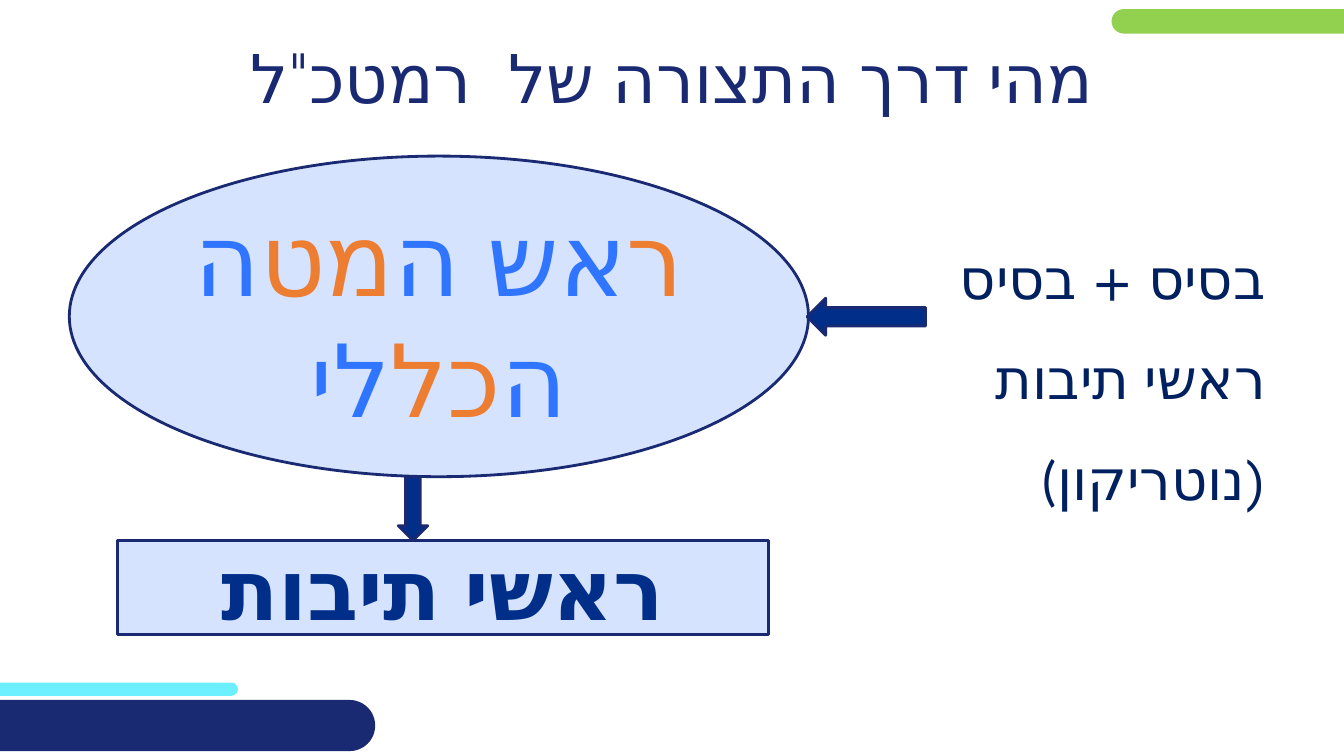
from lxml.etree import SubElement
from pptx import Presentation
from pptx.dml.color import RGBColor
from pptx.enum.shapes import MSO_SHAPE as Shape
from pptx.enum.text import MSO_ANCHOR as Anchor, MSO_AUTO_SIZE as AutoSize, PP_ALIGN as Align
from pptx.oxml.ns import qn
from pptx.util import Pt

FONT = "TeX Gyre Adventor"
NAVY, BLUE, DEEP = "192A72", "002E89", "002060"
PALE, BRIGHT, ORANGE = "D6E3FF", "3075FF", "ED7D31"
GREEN, CYAN = "92D050", "6CF0FF"


def color(value):
    return RGBColor.from_string(value)


def place(item, box):
    item.left, item.top, item.width, item.height = [Pt(length) for length in box]


def add_shape(page, kind, box, fill, line=None):
    shape = page.shapes.add_shape(kind, *[Pt(length) for length in box])
    shape.shadow.inherit = False
    shape.fill.solid()
    shape.fill.fore_color.rgb = color(fill)
    if line:
        shape.line.color.rgb = color(line)
        shape.line.width = Pt(2)
    else:
        shape.line.fill.background()
    return shape


def set_frame(item, anchor):
    frame = item.text_frame
    frame.word_wrap = True
    frame.auto_size = AutoSize.NONE
    frame.vertical_anchor = anchor
    return frame


def format_para(para, align, spacing=1.0):
    """Right-to-left paragraph without bullet or indent."""
    para.alignment = align
    para.line_spacing = spacing
    para.space_before = Pt(0)
    props = para._p.get_or_add_pPr()
    for name, value in (("rtl", "1"), ("marL", "0"), ("marR", "0"), ("indent", "0")):
        props.set(name, value)
    SubElement(props, qn("a:buNone"))


def add_run(para, text, size, tint, bold=False, font=FONT):
    span = para.add_run()
    span.text = text
    span.font.size = Pt(size)
    span.font.bold = bold
    span.font.color.rgb = color(tint)
    span.font.name = font
    # Hebrew takes its typeface from the complex-script entry
    props = span._r.get_or_add_rPr()
    props.set("lang", "he-IL")
    SubElement(props, qn("a:cs")).set("typeface", font)


def add_bars(page, width, height):
    """Rounded bars that bleed off the page edges."""
    bars = [
        ((-72, height - 52.5, 242, 9.5), CYAN),
        ((width - 166, 6.5, 418, 17.5), GREEN),
        ((-170, height - 40, 438, 36.5), NAVY),
    ]
    for box, fill in bars:
        add_shape(page, Shape.ROUNDED_RECTANGLE, box, fill).adjustments[0] = 0.5


def add_title(page, box):
    title = page.shapes.title
    place(title, box)
    para = set_frame(title, Anchor.MIDDLE).paragraphs[0]
    format_para(para, Align.CENTER)
    add_run(para, 'מהי דרך התצורה של  רמטכ"ל', 48, NAVY)


def add_methods(page, box):
    """List of word-formation methods on the right."""
    body = page.placeholders[1]
    place(body, box)
    frame = set_frame(body, Anchor.TOP)
    lines = [
        [("בסיס + בסיס", FONT)],
        [("ראשי תיבות", FONT)],
        [("(נוטריקון", FONT), (")", "Calibri")],
    ]
    for index, parts in enumerate(lines):
        para = frame.add_paragraph() if index else frame.paragraphs[0]
        format_para(para, Align.RIGHT, 1.5)
        for text, font in parts:
            add_run(para, text, 40, DEEP, font=font)


def add_diagram(page, box):
    """Ellipse with the full phrase, arrows, and the resulting method."""
    left, top, width, height = box
    ellipse_height, answer_height = 229, 67
    ellipse = add_shape(page, Shape.OVAL, (left, top, 528, ellipse_height), PALE, NAVY)
    para = set_frame(ellipse, Anchor.MIDDLE).paragraphs[0]
    format_para(para, Align.CENTER)
    pieces = ["ר", "אש ה", "מט", "ה ה", "כל", "לי"]
    for index, text in enumerate(pieces):
        add_run(para, text, 72, BRIGHT if index % 2 else ORANGE)

    # Arrows into and out of the ellipse
    add_shape(page, Shape.LEFT_ARROW,
              (left + 527, top + ellipse_height / 2 - 13, width - 527, 26.5), BLUE, NAVY)
    gap = height - ellipse_height - answer_height
    add_shape(page, Shape.DOWN_ARROW,
              (left + 235, top + ellipse_height, 21, gap), BLUE, NAVY)

    # Answer
    answer = add_shape(page, Shape.RECTANGLE,
                       (left + 34.5, top + height - answer_height, 465, answer_height), PALE, NAVY)
    para = set_frame(answer, Anchor.MIDDLE).paragraphs[0]
    format_para(para, Align.CENTER)
    add_run(para, "ראשי תיבות", 60, BLUE, bold=True)


def main():
    width, height = 960, 540
    deck = Presentation()
    deck.slide_width, deck.slide_height = Pt(width), Pt(height)
    page = deck.slides.add_slide(deck.slide_layouts[1])
    add_bars(page, width, height)
    add_title(page, (0, 15, width, 79))
    add_diagram(page, (49.5, 111.5, 611.5, 341.5))
    add_methods(page, (669.5, 146, 242, 218))
    deck.save("out.pptx")


if __name__ == "__main__":
    main()
